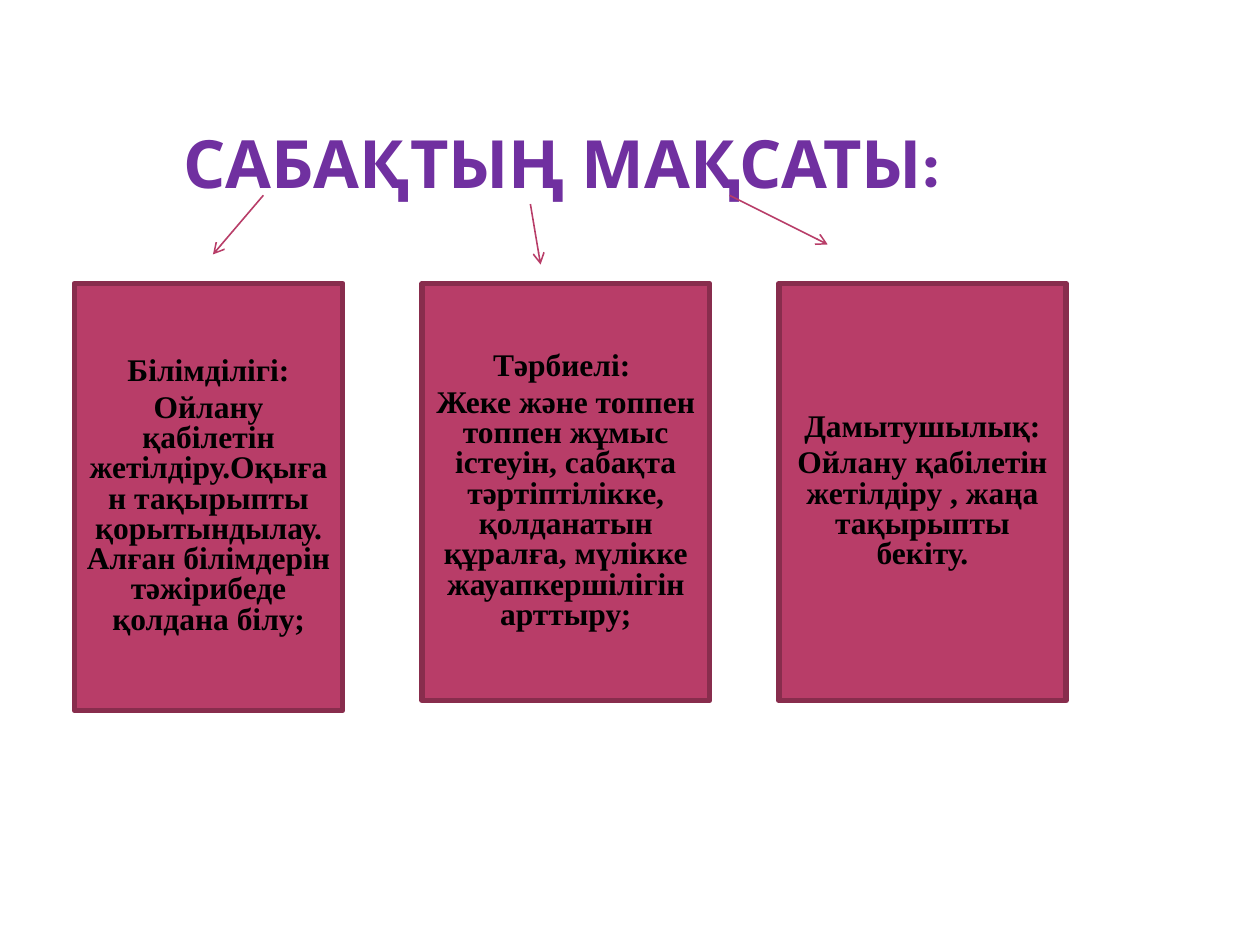
import pptx
import pptx.util
import pptx.dml.color
import pptx.enum.shapes
import pptx.enum.text
import pptx.oxml.ns
from lxml import etree

Pt = pptx.util.Pt
ANCHOR = pptx.enum.text.MSO_ANCHOR
CENTER = pptx.enum.text.PP_ALIGN.CENTER
COLORS = {"title": "7030A0", "card": "B83D68", "border": "882D4D", "text": "000000"}


def rgb(part):
    return pptx.dml.color.RGBColor.from_string(COLORS[part])


def add_bold_run(paragraph, text, font_name, size, part):
    run = paragraph.add_run()
    run.text = text
    run.font.name = font_name
    run.font.size = Pt(size)
    run.font.bold = True
    run.font.color.rgb = rgb(part)


presentation = pptx.Presentation()
presentation.slide_width, presentation.slide_height = Pt(720), Pt(540)
slide = presentation.slides.add_slide(presentation.slide_layouts[5])

# Title
heading = slide.shapes.title
heading.left, heading.top, heading.width, heading.height = Pt(36), Pt(25.2), Pt(570.24), Pt(90)
heading_frame = heading.text_frame
heading_frame.word_wrap = True
heading_frame.auto_size = pptx.enum.text.MSO_AUTO_SIZE.NONE
heading_frame.vertical_anchor = ANCHOR.BOTTOM
heading_frame.margin_left = heading_frame.margin_right = Pt(3.6)
heading_frame.margin_top = heading_frame.margin_bottom = 0
heading_frame.paragraphs[0].alignment = CENTER
add_bold_run(heading_frame.paragraphs[0], "САБАҚТЫҢ МАҚСАТЫ:", "Karla", 38, "title")

# Goal cards: left, width, height, name, description
goals = [
    (42.5, 153.4, 244, "Білімділігі:",
     "Ойлану қабілетін жетілдіру.Оқыған тақырыпты қорытындылау. "
     "Алған білімдерін тәжірибеде қолдана білу;"),
    (241.2, 164.2, 238.3, "Тәрбиелі: ",
     "Жеке және топпен топпен жұмыс істеуін, сабақта тәртіптілікке, "
     "қолданатын құралға, мүлікке жауапкершілігін арттыру;"),
    (445, 164.2, 238.3, "Дамытушылық:",
     "Ойлану қабілетін жетілдіру , жаңа тақырыпты бекіту."),
]
for left, width, height, goal, description in goals:
    card = slide.shapes.add_shape(pptx.enum.shapes.MSO_SHAPE.RECTANGLE,
                                  Pt(left), Pt(162), Pt(width), Pt(height))
    card.shadow.inherit = False
    card.fill.solid()
    card.fill.fore_color.rgb = rgb("card")
    card.line.color.rgb = rgb("border")
    card.line.width = Pt(3.15)
    card_frame = card.text_frame
    card_frame.word_wrap = True
    card_frame.vertical_anchor = ANCHOR.MIDDLE
    goal_line, description_line = card_frame.paragraphs[0], card_frame.add_paragraph()
    description_line.space_before = Pt(3.6)
    for paragraph, text in ((goal_line, goal), (description_line, description)):
        paragraph.alignment = CENTER
        paragraph.line_spacing = 0.8
        add_bold_run(paragraph, text, "Times New Roman", 18, "text")

# Arrows from the title to the cards
for x1, y1, x2, y2 in [(150.5, 111.6, 121.7, 145.4),
                       (303.1, 116.6, 308.9, 151.2),
                       (416.9, 111.6, 473, 139.7)]:
    arrow = slide.shapes.add_connector(pptx.enum.shapes.MSO_CONNECTOR.STRAIGHT,
                                       Pt(x1), Pt(y1), Pt(x2), Pt(y2))
    arrow.line.color.rgb = rgb("card")
    arrow.line.width = Pt(0.9)
    etree.SubElement(arrow.line._get_or_add_ln(), pptx.oxml.ns.qn("a:tailEnd"), type="arrow")
    etree.SubElement(arrow._element.spPr, pptx.oxml.ns.qn("a:effectLst"))

presentation.save("out.pptx")
